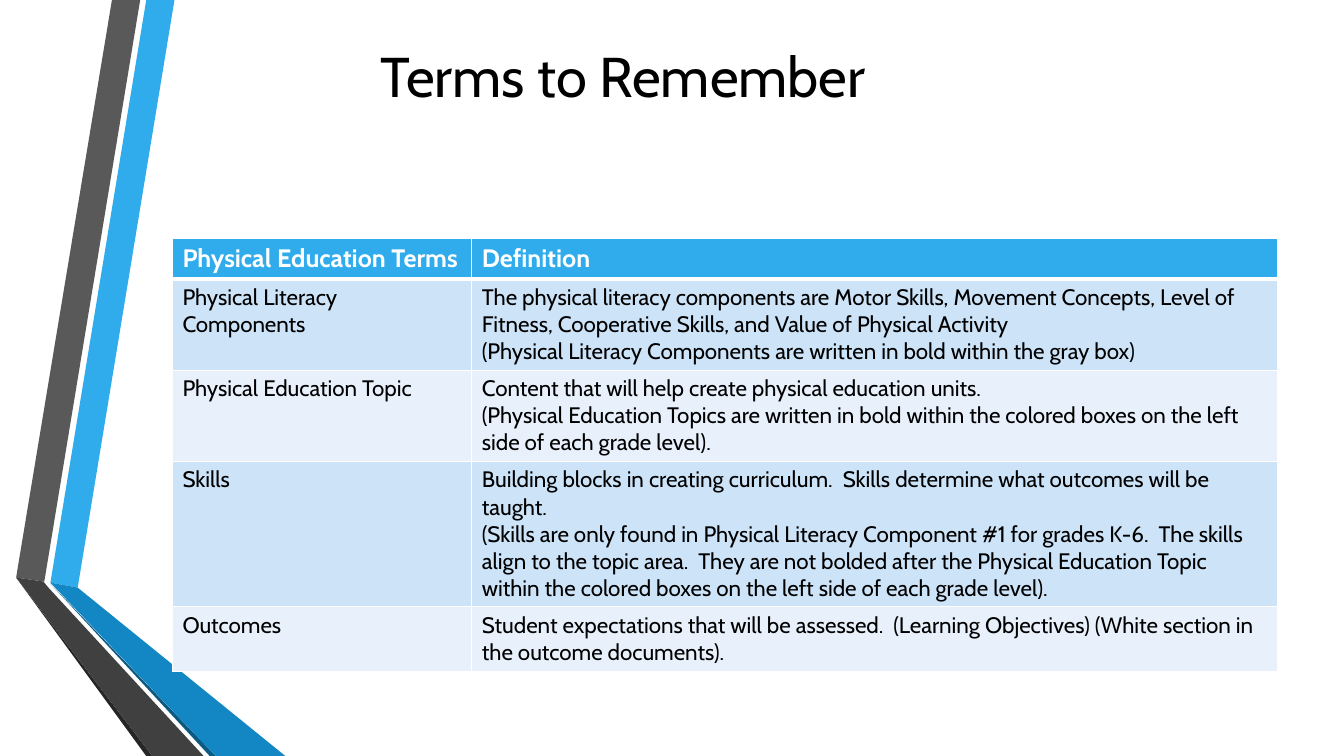
from pptx import Presentation
from pptx import util as u
from pptx.dml.color import RGBColor
from pptx.enum import text
from pptx.oxml import parse_xml
from pptx.oxml.ns import nsdecls

WHITE = RGBColor(0xFF, 0xFF, 0xFF)
BLACK = RGBColor(0x00, 0x00, 0x00)
SKY = RGBColor(0x30, 0xAC, 0xEC)
OCEAN = RGBColor(0x12, 0x87, 0xC3)
NAVY = RGBColor(0x0C, 0x5A, 0x82)
GRAY = RGBColor(0x59, 0x59, 0x59)
CHARCOAL = RGBColor(0x40, 0x40, 0x40)
SOOT = RGBColor(0x26, 0x26, 0x26)
BAND_DARK = RGBColor(0xCD, 0xE3, 0xF8)
BAND_LIGHT = RGBColor(0xE8, 0xF1, 0xFB)

# Outlines in percent of the slide's width and height
RIBBONS = [
    (SKY, [(3.75, 77.07), (5.78, 77.73), (12.98, 0), (10.88, 0)]),
    (GRAY, [(10.43, 0), (8.33, 0), (1.2, 76.4), (3.3, 76.93)]),
    (SOOT, [(1.2, 76.4), (10.88, 100), (11.33, 100)]),
    (NAVY, [(3.75, 77.2), (15.6, 100), (16.05, 100)]),
    (OCEAN, [(3.75, 77.07), (16.05, 100), (21.23, 100), (5.78, 77.73)]),
    (CHARCOAL, [(15.15, 100), (3.6, 77.73), (3.23, 76.93), (1.2, 76.4), (11.33, 100)]),
]

TERMS = [
    ("Physical Education Terms", ["Definition"]),
    ("Physical Literacy Components", [
        "The physical literacy components are Motor Skills, Movement Concepts, "
        "Level of Fitness, Cooperative Skills, and Value of Physical Activity",
        "(Physical Literacy Components are written in bold within the gray box)"]),
    ("Physical Education Topic", [
        "Content that will help create physical education units.",
        "(Physical Education Topics are written in bold within the colored boxes "
        "on the left side of each grade level)."]),
    ("Skills", [
        "Building blocks in creating curriculum.  Skills determine what outcomes "
        "will be taught.",
        "(Skills are only found in Physical Literacy Component #1 for grades K-6.  "
        "The skills align to the topic area.  They are not bolded after the Physical "
        "Education Topic within the colored boxes on the left side of each grade level)."]),
    ("Outcomes", [
        "Student expectations that will be assessed.  (Learning Objectives) "
        "(White section in the outcome documents)."]),
]


class SlideBuilder:
    """Holds the style and the current slide; lengths are percent of the slide."""

    font = "Cabin"

    def __init__(self, deck):
        self.width, self.height = deck.slide_width, deck.slide_height
        self.slide = deck.slides.add_slide(deck.slide_layouts[5])

    def x(self, percent):
        return u.Emu(round(self.width * percent / 100))

    def y(self, percent):
        return u.Emu(round(self.height * percent / 100))

    def box(self, left, top, width, height):
        return self.x(left), self.y(top), self.x(width), self.y(height)

    def add_lines(self, frame, lines, size, color, bold=False, align=text.PP_ALIGN.LEFT):
        for index, line in enumerate(lines):
            paragraph = frame.add_paragraph() if index else frame.paragraphs[0]
            paragraph.alignment = align
            run = paragraph.add_run()
            run.text = line
            run.font.name, run.font.size = self.font, u.Pt(size)
            run.font.bold, run.font.color.rgb = bold, color

    def ribbon(self, color, outline):
        corners = [(self.x(across), self.y(down)) for across, down in outline]
        builder = self.slide.shapes.build_freeform(*corners[0])
        builder.add_line_segments(corners[1:], close=True)
        shape = builder.convert_to_shape()
        shape.shadow.inherit = False
        shape.fill.solid()
        shape.fill.fore_color.rgb = color
        shape.line.fill.background()

    def title(self, wording, area):
        title = self.slide.shapes.title
        title.left, title.top, title.width, title.height = self.box(*area)
        title.text_frame.vertical_anchor = text.MSO_ANCHOR.MIDDLE
        self.add_lines(title.text_frame, [wording], 40, BLACK, align=text.PP_ALIGN.CENTER)

    def cell(self, cell, lines, row):
        header = row == 0
        weights = {"L": 1, "R": 1, "T": 3 if row == 1 else 1, "B": 3 if header else 1}
        properties = cell._tc.get_or_add_tcPr()
        for side, weight in weights.items():
            properties.append(parse_xml(
                f'<a:ln{side} {nsdecls("a")} w="{u.Pt(weight)}"><a:solidFill>'
                f'<a:srgbClr val="{WHITE}"/></a:solidFill></a:ln{side}>'))
        cell.fill.solid()
        cell.fill.fore_color.rgb = SKY if header else BAND_DARK if row % 2 else BAND_LIGHT
        self.add_lines(cell.text_frame, lines, 18 if header else 16,
                       WHITE if header else BLACK, bold=header)

    def table(self, entries, left, top, widths, heights):
        area = self.box(left, top, sum(widths), sum(heights))
        table = self.slide.shapes.add_table(len(entries), len(widths), *area).table
        for column, width in zip(table.columns, widths):
            column.width = self.x(width)
        for row, (term, definition) in enumerate(entries):
            table.rows[row].height = self.y(heights[row])
            self.cell(table.cell(row, 0), [term], row)
            self.cell(table.cell(row, 1), definition, row)


def main():
    deck = Presentation()
    deck.slide_width, deck.slide_height = u.Inches(13.33), u.Inches(7.5)
    page = SlideBuilder(deck)
    for color, outline in RIBBONS:
        page.ribbon(color, outline)
    page.title("Terms to Remember", (12.9, 3.33, 66.92, 13.2))
    page.table(TERMS, 12.83, 31.47, widths=[22.28, 59.94],
               heights=[5.33, 12, 12, 19.2, 8.4])
    deck.save("out.pptx")


if __name__ == "__main__":
    main()
